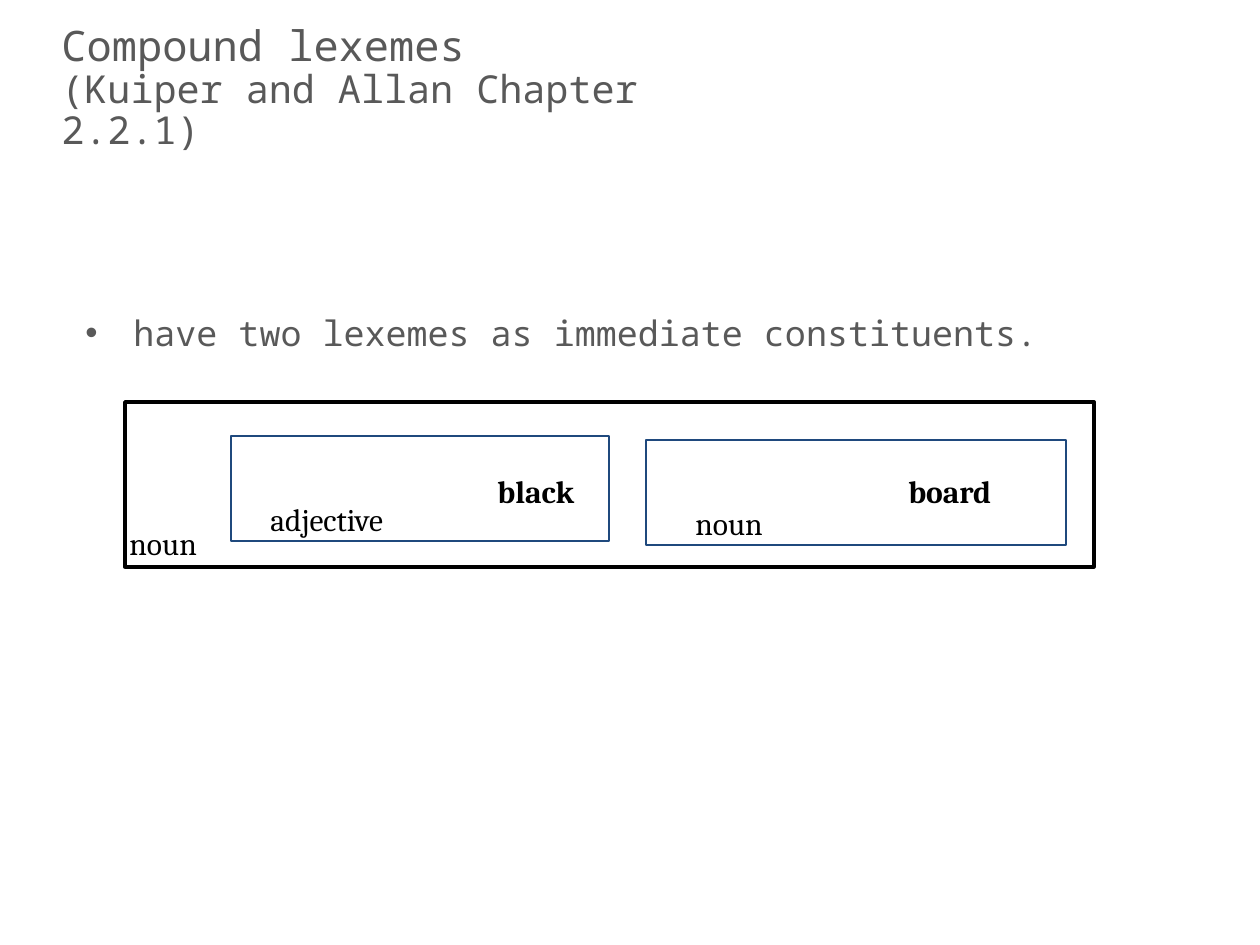
from dataclasses import dataclass
from typing import Optional

import lxml.etree
import pptx
import pptx.dml.color
import pptx.enum.shapes
import pptx.enum.text
import pptx.oxml.ns
import pptx.util

EMU_PER_PX = 914400 / 126
MONO = "Noto Sans Mono"
SERIF = "Cambria"
GREY = "595959"
BLACK = "000000"
NAVY = "1F497D"
WHITE = "FFFFFF"


@dataclass
class Frame:
    """A rectangle, measured in px."""
    left: int
    top: int
    width: int
    height: int
    fill: Optional[str] = None
    line: Optional[str] = None
    weight: float = 0.75


@dataclass
class Label:
    """A word in the constituent diagram, measured in px."""
    text: str
    left: int
    top: int
    width: int
    bold: bool = False


COMPOUND_FRAMES = [
    Frame(125, 404, 968, 160, fill=WHITE),
    Frame(125, 402, 969, 165, line=BLACK, weight=2),
]
CONSTITUENT_FRAMES = [
    Frame(231, 436, 378, 105, line=NAVY),
    Frame(646, 440, 420, 105, line=NAVY),
]
LABELS = [
    Label("black", 485, 466, 132, bold=True),
    Label("board", 896, 466, 141, bold=True),
    Label("adjective", 258, 494, 192),
    Label("noun", 683, 498, 118),
    Label("noun", 117, 518, 118),
]


def px(length: int) -> pptx.util.Emu:
    """Turn px into EMU."""
    return pptx.util.Emu(round(length * EMU_PER_PX))


def colour(value: str) -> pptx.dml.color.RGBColor:
    """Turn a hex string into a colour."""
    return pptx.dml.color.RGBColor.from_string(value)


def apply_format(target, values: dict) -> None:
    """Set each attribute named in the dict."""
    for name, value in values.items():
        setattr(target, name, value)


def style_font(font, name: str, size: int, hue: str, bold: bool = False) -> None:
    """Give a font its face, size, weight and colour."""
    apply_format(font, {"name": name, "size": pptx.util.Pt(size), "bold": bold})
    font.color.rgb = colour(hue)


def draw_frame(shapes, frame: Frame) -> None:
    """Draw one rectangle."""
    box = shapes.add_shape(
        pptx.enum.shapes.MSO_SHAPE.RECTANGLE,
        px(frame.left), px(frame.top), px(frame.width), px(frame.height))
    box.shadow.inherit = False
    if frame.fill:
        box.fill.solid()
        box.fill.fore_color.rgb = colour(frame.fill)
    else:
        box.fill.background()
    if frame.line:
        box.line.color.rgb = colour(frame.line)
        box.line.width = pptx.util.Pt(frame.weight)
    else:
        box.line.fill.background()


def add_text(shapes, left: int, top: int, width: int, height: int, **values):
    """Add a text box with the given frame format and return its text frame."""
    box = shapes.add_textbox(px(left), px(top), px(width), px(height))
    apply_format(box.text_frame, {"word_wrap": True, **values})
    return box.text_frame


def draw_label(shapes, label: Label) -> None:
    """Draw one word of the diagram."""
    frame = add_text(
        shapes, label.left, label.top, label.width, 63, word_wrap=False,
        auto_size=pptx.enum.text.MSO_AUTO_SIZE.SHAPE_TO_FIT_TEXT)
    word = frame.paragraphs[0].add_run()
    word.text = label.text
    style_font(word.font, SERIF, 18, BLACK, label.bold)


def draw_title(shapes) -> None:
    """Draw the heading and its chapter reference."""
    frame = add_text(shapes, 49, 24, 702, 130,
                     vertical_anchor=pptx.enum.text.MSO_ANCHOR.MIDDLE)
    heading = frame.paragraphs[0]
    heading.line_spacing = 0.9
    topic = heading.add_run()
    topic.text = "Compound lexemes"
    style_font(topic.font, MONO, 24, GREY)
    heading.add_line_break()
    reference = heading.add_run()
    reference.text = "(Kuiper and Allan Chapter 2.2.1)"
    style_font(reference.font, MONO, 22, GREY)


def draw_definition(shapes) -> None:
    """Draw the bulleted definition."""
    definition = add_text(shapes, 73, 305, 1061, 640).paragraphs[0]
    properties = definition._p.get_or_add_pPr()
    properties.set("marL", str(px(48)))
    properties.set("indent", str(-px(48)))
    for tag, name, value in (("a:buFont", "typeface", "Arial"),
                             ("a:buChar", "char", "•")):
        bullet = lxml.etree.SubElement(properties, pptx.oxml.ns.qn(tag))
        bullet.set(name, value)
    statement = definition.add_run()
    statement.text = "have two lexemes as immediate constituents."
    style_font(statement.font, MONO, 20, GREY)


def main() -> None:
    """Build the slide and save it."""
    deck = pptx.Presentation()
    apply_format(deck, {"slide_width": px(1260), "slide_height": px(945)})
    shapes = deck.slides.add_slide(deck.slide_layouts[6]).shapes
    draw_title(shapes)
    compound = shapes.add_group_shape().shapes
    for frame in COMPOUND_FRAMES:
        draw_frame(compound, frame)
    for label in LABELS:
        draw_label(compound, label)
    draw_definition(shapes)
    for frame in CONSTITUENT_FRAMES:
        draw_frame(shapes, frame)
    deck.save("out.pptx")


if __name__ == "__main__":
    main()
